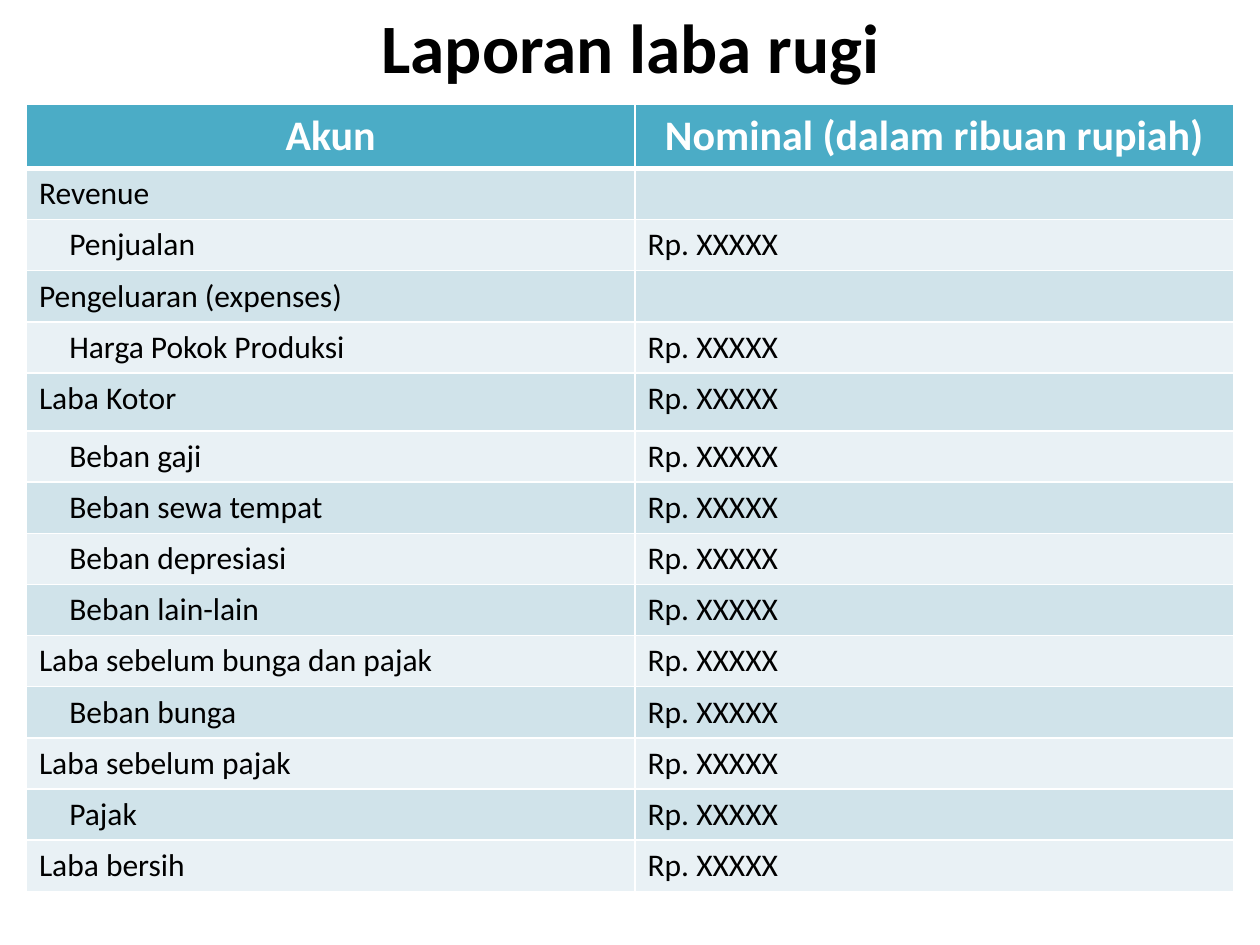
"""Build an income statement slide with a two-column table."""
from lxml import etree
from pptx import Presentation
from pptx import util as u
from pptx.dml.color import RGBColor
from pptx.enum import text
from pptx.oxml import ns

COLORS = {
    "ink": "000000",
    "paper": "FFFFFF",
    "header": "4BACC6",
    "band_dark": "D0E3EA",
    "band_light": "E9F1F5",
}
AMOUNT = "Rp. XXXXX"
HEADINGS = ("Akun", "Nominal (dalam ribuan rupiah)")
ACCOUNTS = [
    ("Revenue", 0, ""),
    ("Penjualan", 1, AMOUNT),
    ("Pengeluaran (expenses)", 0, ""),
    ("Harga Pokok Produksi", 1, AMOUNT),
    ("Laba Kotor", 0, AMOUNT),
    ("Beban gaji", 1, AMOUNT),
    ("Beban sewa tempat", 1, AMOUNT),
    ("Beban depresiasi", 1, AMOUNT),
    ("Beban lain-lain", 1, AMOUNT),
    ("Laba sebelum bunga dan pajak", 0, AMOUNT),
    ("Beban bunga", 1, AMOUNT),
    ("Laba sebelum pajak", 0, AMOUNT),
    ("Pajak", 1, AMOUNT),
    ("Laba bersih", 0, AMOUNT),
]


class StatementSlide:
    """Hold the style and the current slide."""

    font_name = "Calibri"
    indent = u.Inches(0.24)

    def __init__(self, deck):
        self.slide = deck.slides.add_slide(deck.slide_layouts[5])

    def style(self, paragraph, size, color, bold=False):
        """Format the runs of a paragraph."""
        for run in paragraph.runs:
            run.font.name = self.font_name
            run.font.size = u.Pt(size)
            run.font.bold = bold
            run.font.color.rgb = RGBColor.from_string(COLORS[color])

    def title(self, wording, left, top, width, height):
        """Place and format the title placeholder."""
        heading = self.slide.shapes.title
        heading.left, heading.top = u.Inches(left), u.Inches(top)
        heading.width, heading.height = u.Inches(width), u.Inches(height)
        frame = heading.text_frame
        frame.text = wording
        frame.auto_size = text.MSO_AUTO_SIZE.NONE
        frame.vertical_anchor = text.MSO_ANCHOR.MIDDLE
        frame.paragraphs[0].alignment = text.PP_ALIGN.CENTER
        self.style(frame.paragraphs[0], 39.6, "ink", bold=True)

    def borders(self, cell, top=1, bottom=1):
        """Draw white lines around a cell."""
        properties = cell._tc.get_or_add_tcPr()
        for side, points in (("L", 1), ("R", 1), ("T", top), ("B", bottom)):
            line = etree.SubElement(properties, ns.qn(f"a:ln{side}"), w=str(u.Pt(points)))
            fill = etree.SubElement(line, ns.qn("a:solidFill"))
            etree.SubElement(fill, ns.qn("a:srgbClr"), val=COLORS["paper"])

    def cell(self, cell, wording, fill, level=0, header=False, top=1):
        """Fill one table cell."""
        self.borders(cell, top, bottom=3 if header else 1)
        cell.fill.solid()
        cell.fill.fore_color.rgb = RGBColor.from_string(COLORS[fill])
        cell.text_frame.text = wording
        paragraph = cell.text_frame.paragraphs[0]
        if level:
            properties = paragraph._p.get_or_add_pPr()
            properties.set("marL", str(self.indent * level))
            properties.set("indent", "0")
        if header:
            paragraph.alignment = text.PP_ALIGN.CENTER
            self.style(paragraph, 24, "paper", bold=True)
        else:
            self.style(paragraph, 18, "ink")

    def statement(self, left, top, widths, height, header_height, gross_height):
        """Add the table of accounts and amounts."""
        table = self.slide.shapes.add_table(
            len(ACCOUNTS) + 1, len(HEADINGS), u.Inches(left), u.Inches(top),
            u.Inches(sum(widths)), u.Inches(height)).table
        for column, width in zip(table.columns, widths):
            column.width = u.Inches(width)
        row_height = (height - header_height - gross_height) / (len(ACCOUNTS) - 1)
        table.rows[0].height = u.Inches(header_height)
        for column, heading in enumerate(HEADINGS):
            self.cell(table.cell(0, column), heading, "header", header=True)
        for row, (account, level, amount) in enumerate(ACCOUNTS, start=1):
            is_gross = account == "Laba Kotor"
            table.rows[row].height = u.Inches(gross_height if is_gross else row_height)
            band = "band_dark" if row % 2 else "band_light"
            line_top = 3 if row == 1 else 1
            self.cell(table.cell(row, 0), account, band, level, top=line_top)
            self.cell(table.cell(row, 1), amount, band, top=line_top)


def main():
    """Build and save the deck."""
    deck = Presentation()
    deck.slide_width, deck.slide_height = u.Inches(10), u.Inches(7.5)
    page = StatementSlide(deck)
    page.title("Laporan laba rugi", 0.67, 0.01, 8.67, 0.7)
    page.statement(0.21, 0.83, (4.83, 4.75), 6.23, header_height=0.49, gross_height=0.46)
    deck.save("out.pptx")


if __name__ == "__main__":
    main()
